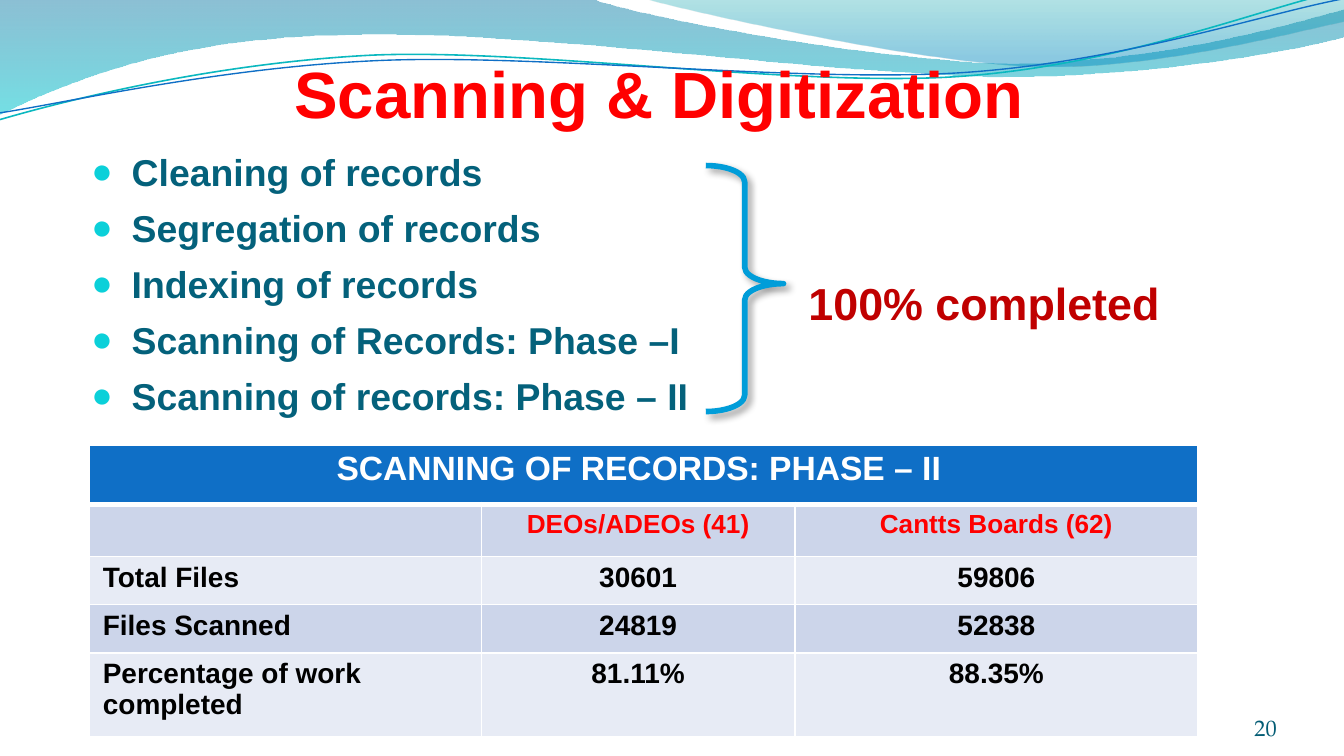
from math import cos, radians, sin

from lxml.etree import SubElement
from pptx import Presentation
from pptx.dml.color import RGBColor
from pptx.enum.shapes import MSO_SHAPE
from pptx.enum.text import MSO_ANCHOR, MSO_AUTO_SIZE, PP_ALIGN
from pptx.oxml import parse_xml
from pptx.oxml.ns import nsdecls, qn
from pptx.util import Cm, Pt

GRID = Cm(2.54)  # one unit of the wave coordinates


def color(hex_string):
    return RGBColor.from_string(hex_string)


def write_text(paragraph, text, size=15, color_hex="000000", font="Arial", bold=True,
               align=PP_ALIGN.LEFT, before=0, after=0):
    paragraph.alignment = align
    paragraph.space_before, paragraph.space_after = Pt(before), Pt(after)
    run = paragraph.add_run()
    run.text = text
    run.font.name, run.font.size, run.font.bold = font, Pt(size), bold
    run.font.color.rgb = color(color_hex)


def turn(point, center, degrees):
    x, y = point[0] - center[0], point[1] - center[1]
    c, s = cos(radians(degrees)), sin(radians(degrees))
    return center[0] + x * c - y * s, center[1] + x * s + y * c


class SlideBuilder:
    accent, heading, alert = "0F6FC6", "04617B", "FF0000"
    bands = ("CCD5EA", "E7EBF5")

    def __init__(self, presentation):
        self.slide = presentation.slides.add_slide(presentation.slide_layouts[5])
        self.shapes = self.slide.shapes

    def wave(self, start, segments, stops=None, line=None, center=(0, 0), rotation=0):
        """Segments are lines (x, y) or cubic curves (x1, y1, x2, y2, x, y)."""
        points = [start] + [segment[i:i + 2] for segment in segments
                            for i in range(0, len(segment), 2)]
        points = [(x * GRID, y * GRID)
                  for x, y in (turn(point, center, -rotation) for point in points)]
        builder = self.shapes.build_freeform(*points[0], scale=1.0)
        builder.add_line_segments(points[1:], close=stops is not None)
        shape = builder.convert_to_shape()
        self.bend(shape, segments)
        shape.rotation = rotation
        shape.shadow.inherit = False
        if line:
            shape.fill.background()
            shape.line.color.rgb, shape.line.width = color(line[0]), Pt(line[1])
            return
        shape.line.fill.background()
        shape.fill.gradient()
        shape.fill.gradient_angle = 270
        for stop, (position, color_hex, _) in zip(shape.fill.gradient_stops, stops):
            stop.position, stop.color.rgb = position, color(color_hex)
        for node, (_, _, opacity) in zip(shape._element.iter(qn("a:srgbClr")), stops):
            SubElement(node, qn("a:alpha"), val=str(opacity * 1000))

    def bend(self, shape, segments):
        """Join each three points of a curve segment into one cubic curve."""
        nodes = iter(list(shape._element.iter(qn("a:lnTo"))))
        for segment in segments:
            group = [next(nodes) for _ in range(len(segment) // 2)]
            if len(group) == 3:
                curve = parse_xml(f'<a:cubicBezTo {nsdecls("a")}/>')
                group[0].addprevious(curve)
                for node in group:
                    curve.append(node[0])
                    node.getparent().remove(node)

    def title(self, text, box):
        title = self.shapes.title
        title.left, title.top, title.width, title.height = map(Cm, box)
        frame = title.text_frame
        frame.auto_size = MSO_AUTO_SIZE.NONE
        frame.vertical_anchor = MSO_ANCHOR.BOTTOM
        frame.margin_left = frame.margin_right = frame.margin_bottom = 0
        write_text(frame.paragraphs[0], text, size=35, color_hex=self.alert,
                   align=PP_ALIGN.CENTER)
        title._element.getparent().append(title._element)  # in front of the waves

    def text(self, lines, box, bullets=False, margins=True, anchor=MSO_ANCHOR.TOP, **style):
        frame = self.shapes.add_textbox(*map(Cm, box)).text_frame
        frame.word_wrap = True
        frame.vertical_anchor = anchor
        if not margins:
            frame.margin_left = frame.margin_right = frame.margin_top = frame.margin_bottom = 0
        for index, line in enumerate(lines):
            paragraph = frame.add_paragraph() if index else frame.paragraphs[0]
            write_text(paragraph, line, **style)
            if bullets:
                self.bullet(paragraph)
        return frame

    def bullet(self, paragraph):
        properties = paragraph._p.get_or_add_pPr()
        properties.set("marL", str(Cm(0.76)))
        properties.set("indent", str(-Cm(0.76)))
        SubElement(SubElement(properties, qn("a:buClr")), qn("a:srgbClr"), val="0BD0D9")
        SubElement(properties, qn("a:buSzPct"), val="95000")
        SubElement(properties, qn("a:buFont"), typeface="Arial")
        SubElement(properties, qn("a:buChar"), char="●")

    def brace(self, box):
        shape = self.shapes.add_shape(MSO_SHAPE.RIGHT_BRACE, *map(Cm, box))
        shape.adjustments[0], shape.adjustments[1] = 0.21, 0.48
        shape.fill.background()
        shape.line.color.rgb, shape.line.width = color("009DD9"), Pt(3)
        shape.shadow.inherit = False
        effects = shape._element.spPr.find(qn("a:effectLst"))
        effects.append(parse_xml(
            f'<a:outerShdw {nsdecls("a")} blurRad="{Pt(4)}" dist="{Pt(3)}" dir="2700000">'
            '<a:srgbClr val="000000"><a:alpha val="40000"/></a:srgbClr></a:outerShdw>'))

    def table(self, rows, left, top, widths, heights):
        table = self.shapes.add_table(len(rows), len(widths), Cm(left), Cm(top),
                                      Cm(sum(widths)), Cm(sum(heights))).table
        for column, width in zip(table.columns, widths):
            column.width = Cm(width)
        for row, height in zip(table.rows, heights):
            row.height = Cm(height)
        table.cell(0, 0).merge(table.cell(0, len(widths) - 1))
        for r, values in enumerate(rows):
            for c, value in enumerate(values):
                cell = table.cell(r, c)
                cell.margin_top = cell.margin_bottom = Cm(0.1)
                cell.fill.solid()
                cell.fill.fore_color.rgb = color(self.bands[(r - 1) % 2] if r else self.accent)
                self.borders(cell, top=3 if r == 1 else 1, bottom=1 if r else 3)
                if value:
                    size, text_color = {0: (18, "FFFFFF"), 1: (14, self.alert)}.get(
                        r, (15, "000000"))
                    align = PP_ALIGN.LEFT if r > 1 and c == 0 else PP_ALIGN.CENTER
                    write_text(cell.text_frame.paragraphs[0], value, size=size,
                               color_hex=text_color, align=align, after=6)

    def borders(self, cell, top, bottom):
        properties = cell._tc.get_or_add_tcPr()
        for index, (side, width) in enumerate((("L", 1), ("R", 1), ("T", top), ("B", bottom))):
            properties.insert(index, parse_xml(
                f'<a:ln{side} {nsdecls("a")} w="{Pt(width)}"><a:solidFill>'
                f'<a:srgbClr val="FFFFFF"/></a:solidFill></a:ln{side}>'))


def main():
    presentation = Presentation()
    presentation.slide_width, presentation.slide_height = Cm(25.4), Cm(14.29)
    builder = SlideBuilder(presentation)

    # Waves along the top
    builder.wave((0, 0), [
        (4.4, -0.01), (4.76, 0.13, 6.64, 0.47, 7.58, 0.47),
        (8.53, 0.47, 9.58, 0.19, 10, 0.07), (10.01, 0.27),
        (9.83, 0.33, 8.7, 0.57, 7.46, 0.57), (6.22, 0.56, 3.82, 0.21, 2.57, 0.26),
        (1.29, 0.27, 0.46, 0.62, -0.01, 0.85), (0, 0),
    ], stops=[(0, "0074A1", 45), (1, "00C6CF", 55)])
    builder.wave((4.79, -0.01), [
        (5.09, 0.08, 6.82, 0.46, 7.69, 0.49), (8.56, 0.52, 9.61, 0.24, 10, 0.16),
        (10, 0), (4.79, -0.01),
    ], stops=[(0, "00A1A9", 30), (0.8, "008BBF", 45)])
    builder.wave((0, 0.89), [
        (0.48, 0.75, 1.58, 0.47, 2.77, 0.41), (3.96, 0.36, 5.92, 0.65, 7.12, 0.57),
        (8.33, 0.49, 9.39, 0.06, 9.98, -0.07),
    ], line=("0AB8BF", 0.85), center=(4.99, 0.43), rotation=357.3)
    builder.wave((0, 0.84), [
        (0.47, 0.77, 1.64, 0.5, 2.83, 0.45), (4.03, 0.4, 5.97, 0.62, 7.17, 0.54),
        (8.36, 0.46, 9.41, 0.1, 10, -0.01),
    ], line=(builder.accent, 0.75), center=(5, 0.44), rotation=357.3)

    # Title, steps and slide number
    builder.title("Scanning & Digitization", (0.4, 0.79, 24.13, 1.7))
    builder.text([
        "Cleaning of records", "Segregation of records", "Indexing of records",
        "Scanning of Records: Phase –I", "Scanning of records: Phase – II",
    ], (1.48, 2.69, 13.97, 4.65), bullets=True, size=20, color_hex=builder.heading, before=6)
    builder.text(["20"], (22.02, 13.24, 2.11, 0.76), margins=False, anchor=MSO_ANCHOR.BOTTOM,
                 size=12, color_hex="045D75", font="TeX Gyre Pagella", bold=False,
                 align=PP_ALIGN.RIGHT)

    # Brace and scanning figures
    builder.brace((13.34, 3.13, 1.47, 4.65))
    builder.table([
        ("SCANNING OF RECORDS: PHASE – II ", "", ""),
        ("", "DEOs/ADEOs (41)", "Cantts Boards (62)"),
        ("Total Files", "30601", "59806"),
        ("Files Scanned", "24819", "52838"),
        ("Percentage of work completed", "81.11%", "88.35%"),
    ], 1.69, 8.41, widths=(7.41, 5.92, 7.62), heights=(1.12, 0.99, 0.91, 0.91, 1.59))

    # Result beside the brace
    result = builder.text(["100% completed"], (15.03, 5.08, 7.62, 1.27), size=24,
                          color_hex="C00000")
    result.auto_size = MSO_AUTO_SIZE.SHAPE_TO_FIT_TEXT

    presentation.save("out.pptx")


if __name__ == "__main__":
    main()
